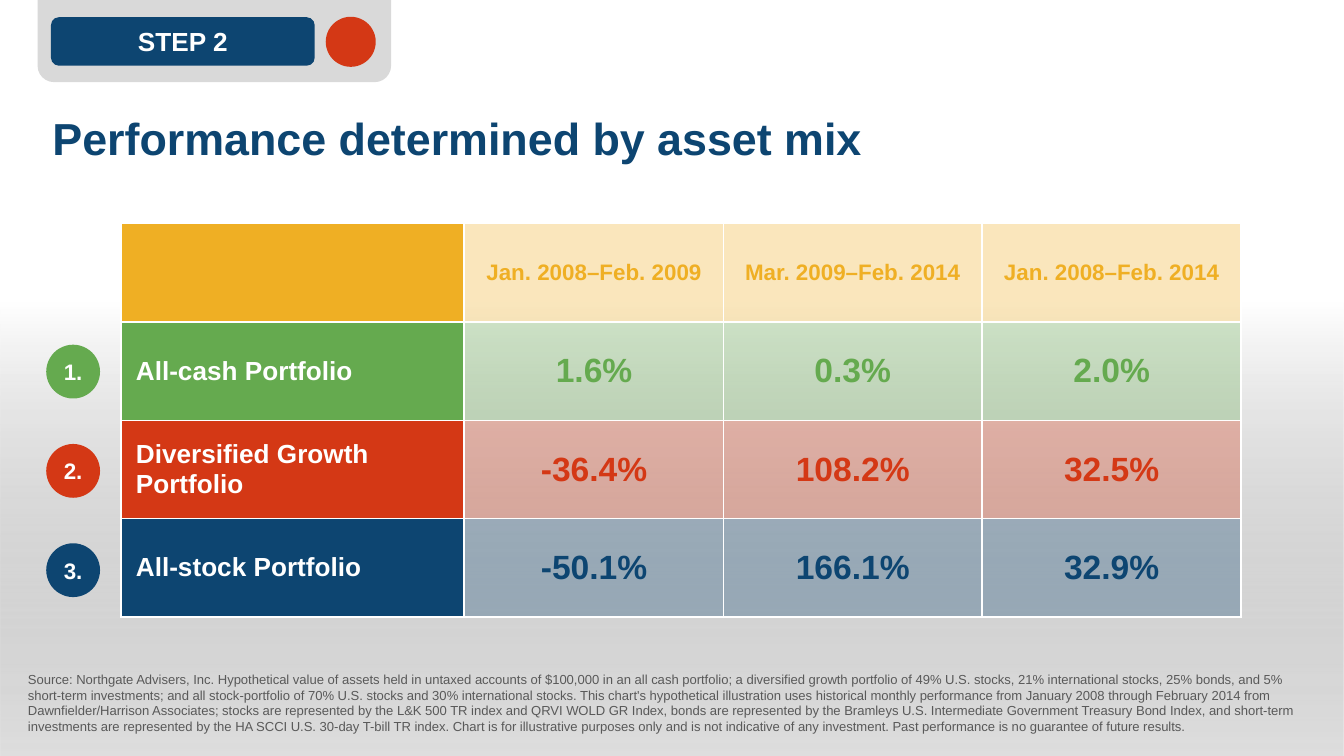
from lxml import etree
from pptx import Presentation
from pptx.dml.color import RGBColor
from pptx.enum import shapes, text
from pptx.oxml import ns
from pptx.util import Pt

COLORS = {"gold": "EFAF24", "green": "65AA4F", "red": "D43815", "navy": "0D4571",
          "white": "FFFFFF", "tab": "D9D9D9", "note": "595959", "shade": "808080"}
CENTER = text.PP_ALIGN.CENTER
MIDDLE = text.MSO_ANCHOR.MIDDLE


def write(frame, words, size, color, bold=True, align=text.PP_ALIGN.LEFT,
          anchor=MIDDLE, wrap=True, inset=(7.2, 3.6)):
    frame.word_wrap = wrap
    frame.vertical_anchor = anchor
    frame.margin_left = frame.margin_right = Pt(inset[0])
    frame.margin_top = frame.margin_bottom = Pt(inset[1])
    paragraph = frame.paragraphs[0]
    paragraph.alignment = align
    run = paragraph.add_run()
    run.text = words
    run.font.name, run.font.size, run.font.bold = "Arial", Pt(size), bold
    run.font.color.rgb = RGBColor.from_string(COLORS[color])


def draw(parent, kind, left, top, width, height, color, line=None):
    shape = parent.shapes.add_shape(kind, Pt(left), Pt(top), Pt(width), Pt(height))
    shape.shadow.inherit = False
    shape.fill.solid()
    shape.fill.fore_color.rgb = RGBColor.from_string(COLORS[color])
    if line:
        shape.line.color.rgb = RGBColor.from_string(COLORS[color])
        shape.line.width = Pt(line)
    else:
        shape.line.fill.background()
    return shape


prs = Presentation()
prs.slide_width, prs.slide_height = Pt(720), Pt(405)
slide = prs.slides.add_slide(prs.slide_layouts[5])

# Backdrop: translucent grey at the bottom rising to white
backdrop = draw(slide, shapes.MSO_SHAPE.RECTANGLE, 0, 0, 720, 405, "white")
backdrop.fill.gradient()
backdrop.fill.gradient_angle = 90
for stop, color, position in zip(backdrop.fill.gradient_stops, ("shade", "white"), (0, 0.6)):
    stop.color.rgb = RGBColor.from_string(COLORS[color])
    stop.position = position
shade = next(backdrop.element.iter(ns.qn("a:srgbClr")))
etree.SubElement(shade, ns.qn("a:alpha"), val="25000")
slide.shapes.element.insert(2, backdrop.element)

# Title
title = slide.shapes.title
title.left, title.top, title.width, title.height = Pt(20.9), Pt(55.6), Pt(449), Pt(36.3)
write(title.text_frame, "Performance determined by asset mix", 24, "navy",
      anchor=text.MSO_ANCHOR.TOP)

# Performance tables: portfolio names, then one per period
row_colors = ["gold", "green", "red", "navy"]
row_height = 52.7
tables_top = 119.8
columns = [
    (64.8, 183.9, ["", "All-cash Portfolio", "Diversified Growth Portfolio", "All-stock Portfolio"]),
    (248.9, 138.7, ["Jan. 2008–Feb. 2009", "1.6%", "-36.4%", "-50.1%"]),
    (387.5, 138.7, ["Mar. 2009–Feb. 2014", "0.3%", "108.2%", "166.1%"]),
    (526.2, 138.7, ["Jan. 2008–Feb. 2014", "2.0%", "32.5%", "32.9%"]),
]
for number, (left, width, entries) in enumerate(columns):
    is_names = number == 0
    table = slide.shapes.add_table(4, 1, Pt(left), Pt(tables_top), Pt(width),
                                   Pt(4 * row_height)).table
    table.horz_banding = False
    for row, (entry, color) in enumerate(zip(entries, row_colors)):
        table.rows[row].height = Pt(row_height)
        cell = table.cell(row, 0)
        cell.margin_left = cell.margin_right = Pt(8)
        cell.margin_top = cell.margin_bottom = Pt(4)
        cell.vertical_anchor = MIDDLE
        properties = cell._tc.get_or_add_tcPr()
        for side in "RTB" if is_names else "LRTB":
            border = etree.SubElement(properties, ns.qn(f"a:ln{side}"), w="12700")
            paint = etree.SubElement(border, ns.qn("a:solidFill"))
            etree.SubElement(paint, ns.qn("a:srgbClr"), val=COLORS["white"])
        cell.fill.solid()
        cell.fill.fore_color.rgb = RGBColor.from_string(COLORS[color])
        if not is_names:
            tint = properties.find(ns.qn("a:solidFill")).find(ns.qn("a:srgbClr"))
            etree.SubElement(tint, ns.qn("a:alpha"), val="30000")
        if entry:
            size = 14 if is_names else 12 if row == 0 else 18
            write(cell.text_frame, entry, size, "white" if is_names else color,
                  align=text.PP_ALIGN.LEFT if is_names else CENTER, inset=(8, 4))

# Numbered row markers
for number, color in enumerate(row_colors[1:], 1):
    marker = draw(slide, shapes.MSO_SHAPE.OVAL, 25.9, 132.6 + 53.2 * number, 26.6, 26.6,
                  color, line=2.25)
    write(marker.text_frame, f"{number}.", 12, "white", align=CENTER, wrap=False, inset=(0, 0))

# Source note
note_sentences = [
    "Source: Northgate Advisers, Inc.",
    "Hypothetical value of assets held in untaxed accounts of $100,000 in an all cash portfolio; "
    "a diversified growth portfolio of 49% U.S. stocks, 21% international stocks, 25% bonds, and "
    "5% short-term investments; and all stock-portfolio of 70% U.S. stocks and 30% international "
    "stocks.",
    "This chart's hypothetical illustration uses historical monthly performance from January 2008 "
    "through February 2014 from Dawnfielder/Harrison Associates; stocks are represented by the "
    "L&K 500 TR index and QRVI WOLD GR Index, bonds are represented by the Bramleys U.S. "
    "Intermediate Government Treasury Bond Index, and short-term investments are represented by "
    "the HA SCCI U.S. 30-day T-bill TR index.",
    "Chart is for illustrative purposes only and is not indicative of any investment.",
    "Past performance is no guarantee of future results.",
]
note = slide.shapes.add_textbox(Pt(7.9), Pt(373), Pt(699), Pt(23.8))
write(note.text_frame, " ".join(note_sentences), 7, "note", bold=False,
      anchor=text.MSO_ANCHOR.BOTTOM)

# Step tab
step = slide.shapes.add_group_shape()
tab = draw(step, shapes.MSO_SHAPE.ROUND_2_SAME_RECTANGLE, 20.1, 0, 189.4, 44, "tab")
tab.rotation = 180
tab.adjustments[0] = 0.2
pill = draw(step, shapes.MSO_SHAPE.ROUNDED_RECTANGLE, 27.3, 9.2, 141.3, 26, "navy")
write(pill.text_frame, "STEP 2", 14, "white", align=CENTER)
draw(step, shapes.MSO_SHAPE.OVAL, 174.5, 9, 26.8, 26.8, "red")

prs.save("out.pptx")
